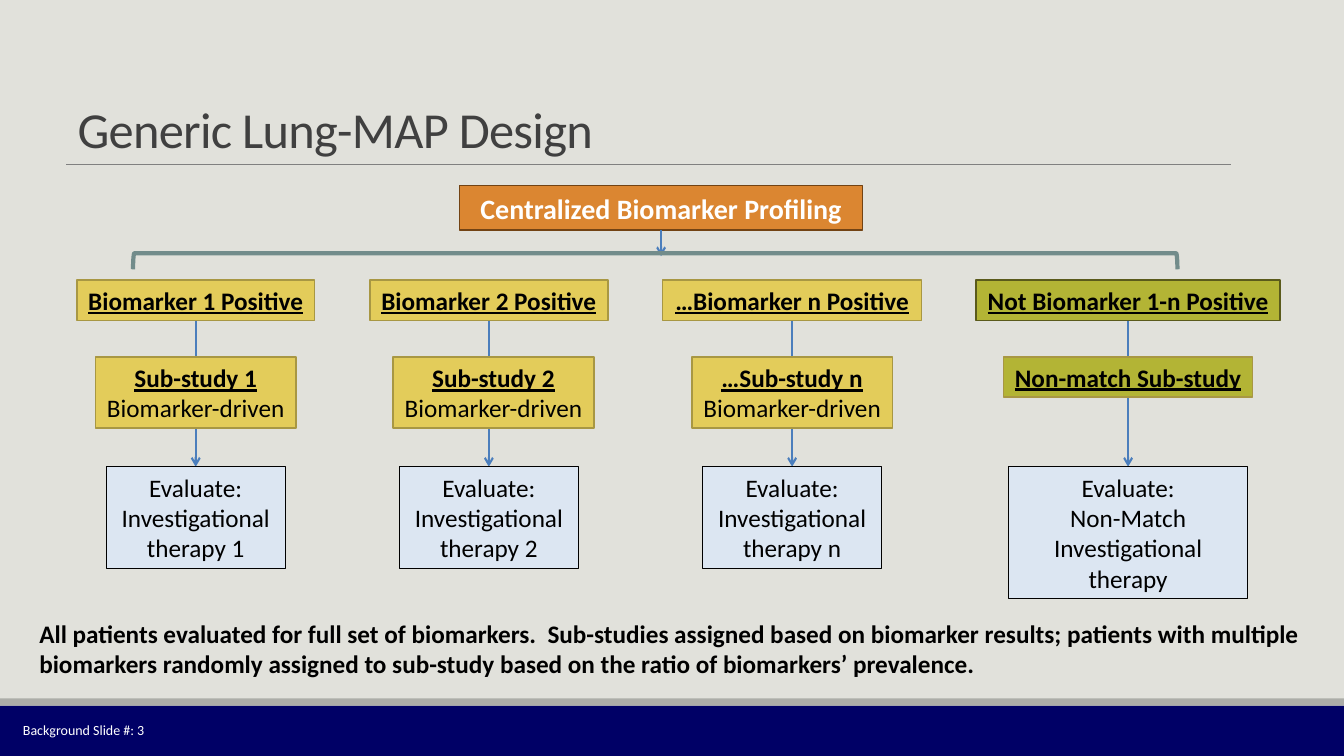
from dataclasses import dataclass

from lxml.etree import SubElement
from pptx import Presentation
from pptx.dml.color import RGBColor
from pptx.enum.shapes import MSO_CONNECTOR as Connector, MSO_SHAPE as Preset
from pptx.enum.text import MSO_ANCHOR as Anchor, MSO_AUTO_SIZE as Fit, PP_ALIGN as Align
from pptx.oxml.ns import qn
from pptx.util import Inches, Pt


@dataclass(frozen=True)
class Theme:
    font: str = "Calibri"
    title_size: int = 36
    head_size: int = 20
    body_size: int = 18
    footer_size: int = 10
    background: str = "E1E1DB"
    title: str = "404040"
    dark: str = "000000"
    light: str = "FFFFFF"
    navy: str = "000066"
    strip: str = "ACADA8"
    rule: str = "808080"
    arrow: str = "4B7EBC"
    bracket: str = "728C8B"
    orange: str = "DB8631"
    brown: str = "724314"
    yellow: str = "E3CC5A"
    gold: str = "A89743"
    olive: str = "B3B435"
    moss: str = "5A5A1B"
    pale: str = "DCE6F2"


def apply(target, formats):
    for name, value in formats.items():
        setattr(target, name, value)


class Canvas:
    """Draws on one slide; lengths are in a grid of 160 columns by 90 rows."""

    def __init__(self, theme):
        self.theme = theme
        self.deck = Presentation()
        apply(self.deck, {"slide_width": Inches(13.33), "slide_height": Inches(7.5)})
        self.slide = self.deck.slides.add_slide(self.deck.slide_layouts[5])
        self.paint(self.slide.background.fill, theme.background)

    def place(self, left, top, width, height):
        column, row = self.deck.slide_width / 160, self.deck.slide_height / 90
        return [round(n) for n in (left * column, top * row, width * column, height * row)]

    def paint(self, fill, color):
        fill.solid()
        fill.fore_color.rgb = RGBColor.from_string(color)

    def stroke(self, line, color, width):
        self.paint(line.fill, color)
        line.width = Pt(width)

    def set_text(self, shape, lines, frame=None, paragraph=None, **font):
        """Each line is a text with its own font formats."""
        text_frame = shape.text_frame
        apply(text_frame, {"word_wrap": True, "auto_size": Fit.NONE} | (frame or {}))
        color = RGBColor.from_string(font.pop("color", self.theme.dark))
        for index, (text, emphasis) in enumerate(lines):
            part = text_frame.add_paragraph() if index else text_frame.paragraphs[0]
            apply(part, {"alignment": Align.LEFT} | (paragraph or {}))
            run = part.add_run()
            run.text = text
            apply(run.font, {"name": self.theme.font, "size": Pt(self.theme.body_size)}
                  | font | emphasis)
            run.font.color.rgb = color

    def title(self, text, area):
        heading = self.slide.shapes.title
        apply(heading, dict(zip(("left", "top", "width", "height"), self.place(*area))))
        self.set_text(heading, [(text, {})], {"vertical_anchor": Anchor.BOTTOM},
                      {"line_spacing": 0.85}, size=Pt(self.theme.title_size),
                      color=self.theme.title)
        heading.text_frame.paragraphs[0].runs[0]._r.get_or_add_rPr().set("spc", "-50")

    def note(self, text, area, frame=None, **font):
        box = self.slide.shapes.add_textbox(*self.place(*area))
        self.set_text(box, [(text, {})], frame, **font)

    def band(self, area, color):
        band = self.slide.shapes.add_shape(Preset.RECTANGLE, *self.place(*area))
        band.shadow.inherit = False
        self.paint(band.fill, color)
        band.line.fill.background()
        return band

    def box(self, center, top, width, height, fill, line, lines, wrap=False, **font):
        box = self.band((center - width / 2, top, width, height), fill)
        self.stroke(box.line, *line)
        self.set_text(box, lines, {"word_wrap": wrap, "auto_size": Fit.SHAPE_TO_FIT_TEXT},
                      {"alignment": Align.CENTER}, **font)

    def line(self, start, end, color, width, arrow=False):
        x1, y1, x2, y2 = self.place(*start, *end)
        line = self.slide.shapes.add_connector(Connector.STRAIGHT, x1, y1, x2, y2)
        self.stroke(line.line, color, width)
        if arrow:
            outline = line._element.spPr.find(qn("a:ln"))
            SubElement(outline, qn("a:tailEnd"), type="arrow")
        SubElement(line._element.spPr, qn("a:effectLst"))

    def bracket(self, center, middle, span, depth):
        """A left bracket turned to open downwards."""
        area = (center - depth / 2, middle - span / 2, depth, span)
        bracket = self.slide.shapes.add_shape(Preset.LEFT_BRACKET, *self.place(*area))
        bracket.rotation = 90
        bracket.shadow.inherit = False
        bracket.fill.background()
        self.stroke(bracket.line, self.theme.bracket, 3)


def main():
    theme = Theme()
    canvas = Canvas(theme)

    # Frame of the slide
    canvas.band((0, 84, 160, 6), theme.navy)
    canvas.band((0, 83.16, 160, 0.84), theme.strip)
    canvas.line((7.92, 19.56), (146.52, 19.56), theme.rule, 0.5)
    canvas.title("Generic Lung-MAP Design", (8.04, 0.48, 138.36, 19.08))

    # Profiling step, leading into all branches
    profiling = 78.7
    canvas.box(profiling, 22.1, 48, 5.28, theme.orange, (theme.brown, 1.25),
               [("Centralized Biomarker Profiling", {})], wrap=True,
               size=Pt(theme.head_size), bold=True, color=theme.light)
    canvas.line((profiling, 27.4), (profiling, 30.5), theme.arrow, 1.5, arrow=True)
    canvas.bracket(78, 31.1, 124.3, 1.92)

    # Branches: biomarker, sub-study, evaluation
    marker_row, study_row, therapy_row = 33.36, 42.48, 55.56
    strong = {"bold": True, "underline": True}
    gold = (theme.gold, 1.25)
    matched = (theme.yellow, gold, 23.88, 8.52, 21.36, 12.12)
    unmatched = (theme.olive, (theme.moss, 1.25), 29.64, 4.8, 28.44, 15.72)

    def matched_branch(center, study_center, width, marker, study, therapy):
        return (center, study_center, width, marker,
                [(study, strong), ("Biomarker-driven", {})],
                [(f"Evaluate: Investigational {therapy}", {})], matched)

    branches = [
        matched_branch(23.3, 23.3, 28.32, "Biomarker 1 Positive", "Sub-study 1", "therapy 1"),
        matched_branch(58.2, 58.74, 28.32, "Biomarker 2 Positive", "Sub-study 2", "therapy 2"),
        matched_branch(94.3, 94.3, 30.84, "…Biomarker n Positive", "…Sub-study n", "therapy n"),
        (134.3, 134.3, 36.24, "Not Biomarker 1-n Positive",
         [("Non-match Sub-study", strong)],
         [("Evaluate:", {}), ("Non-Match Investigational therapy", {})], unmatched),
    ]
    for center, study_center, marker_width, marker, study, therapy, style in branches:
        fill, edge, study_width, study_height, therapy_width, therapy_height = style
        canvas.line((center, 38.2), (center, therapy_row), theme.arrow, 1.5, arrow=True)
        canvas.box(center, marker_row, marker_width, 4.8, fill, edge, [(marker, strong)])
        canvas.box(study_center, study_row, study_width, study_height, fill, gold, study)
        canvas.box(center, therapy_row, therapy_width, therapy_height, theme.pale,
                   (theme.dark, 0.5), therapy, wrap=True)

    # Explanation and footer
    canvas.note("All patients evaluated for full set of biomarkers.  Sub-studies assigned "
                "based on biomarker results; patients with multiple biomarkers randomly "
                "assigned to sub-study based on the ratio of biomarkers’ prevalence.",
                (3.5, 72.96, 152.8, 8.5), bold=True)
    canvas.note("Background Slide #: 3", (1.56, 84.5, 19.3, 4.8),
                {"vertical_anchor": Anchor.MIDDLE},
                size=Pt(theme.footer_size), color=theme.light)

    canvas.deck.save("out.pptx")


if __name__ == "__main__":
    main()
